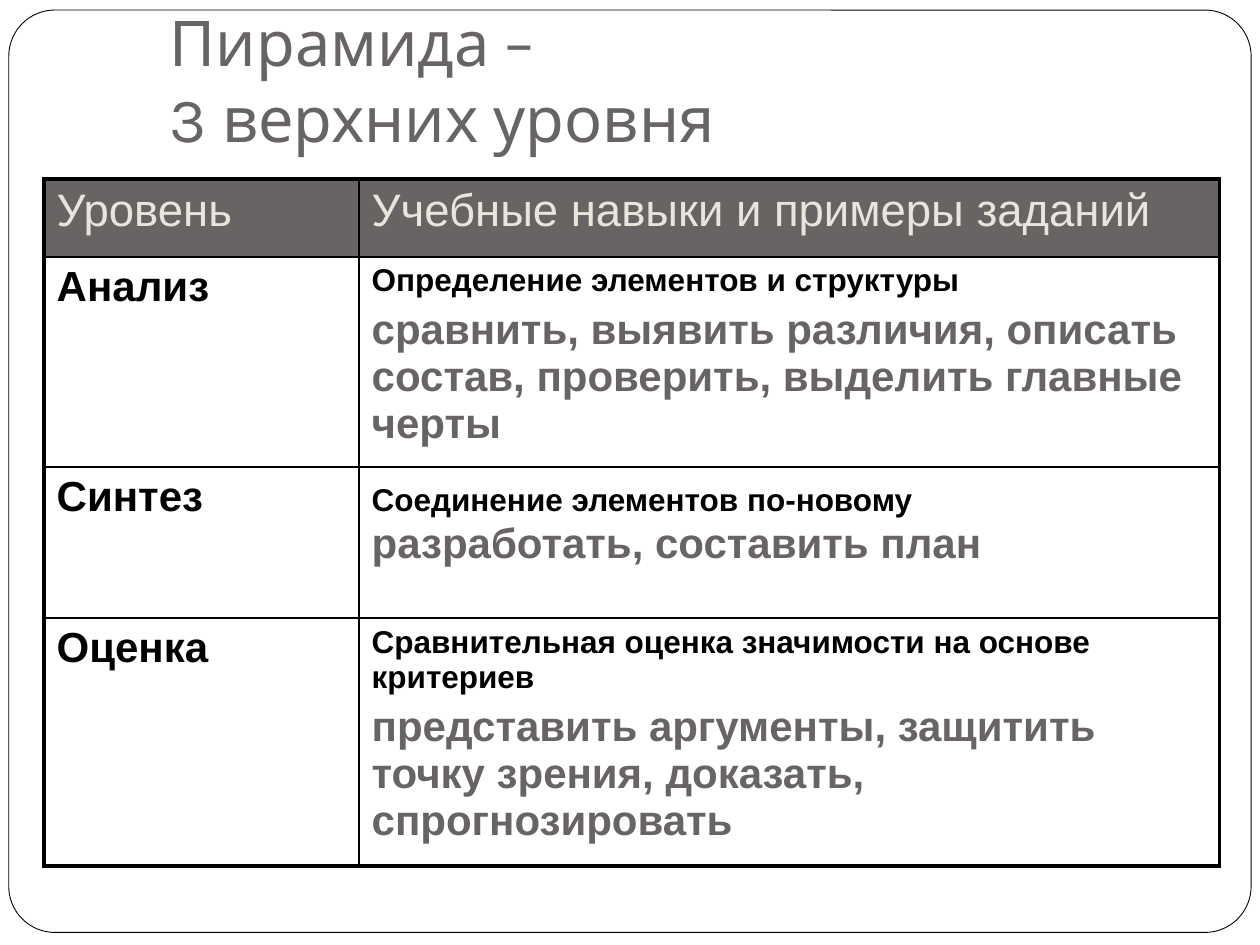
from dataclasses import dataclass

from lxml import etree
from pptx import Presentation
from pptx.dml.color import RGBColor
from pptx.enum.shapes import MSO_SHAPE
from pptx.enum.text import MSO_ANCHOR
from pptx.oxml.ns import qn
from pptx.slide import Slide
from pptx.util import Pt

ROUNDED = MSO_SHAPE.ROUNDED_RECTANGLE
BOTTOM = MSO_ANCHOR.BOTTOM

BLACK = RGBColor(0x00, 0x00, 0x00)
WHITE = RGBColor(0xFF, 0xFF, 0xFF)
GRAY = RGBColor(0x69, 0x64, 0x64)
CREAM = RGBColor(0xE9, 0xE5, 0xDC)

TITLE = {"name": "Karla", "size": Pt(36), "color": GRAY}
HEADER = {"name": "Arial", "size": Pt(26), "bold": False, "color": CREAM}
LEVEL = {"name": "Arial", "size": Pt(24), "bold": True, "color": BLACK}
SKILL = LEVEL | {"size": Pt(18)}
TASK = LEVEL | {"color": GRAY}

COLUMN_WIDTHS = (180, 491.76)
ROW_HEIGHTS = (44.64, 87.12, 86.4, 87.12)
ROWS = [
    ([[("Уровень", HEADER)]],
     [[("Учебные навыки и примеры заданий", HEADER)]]),
    ([[("Анализ", LEVEL)]],
     [[("Определение элементов и структуры", SKILL)],
      [("сравнить, выявить различия, описать состав, проверить, "
        "выделить главные черты", TASK)]]),
    ([[("Синтез", LEVEL)]],
     [[("Соединение элементов по-новому", SKILL), (" \n", LEVEL),
       ("разработать, составить план", TASK)]]),
    ([[("Оценка", LEVEL)]],
     [[("Сравнительная оценка значимости на основе критериев", SKILL)],
      [("представить аргументы, защитить точку зрения, доказать, "
        "спрогнозировать", TASK)]]),
]


@dataclass
class SlideBuilder:
    """Draws styled elements on the current slide, with lengths in points."""

    slide: Slide
    outer_line: float = 2.25
    inner_line: float = 1
    spacing: float = 0.2

    def frame(self, left, top, width, height, adjustment):
        shape = self.slide.shapes.add_shape(
            ROUNDED, Pt(left), Pt(top), Pt(width), Pt(height))
        shape.shadow.inherit = False
        shape.adjustments[0] = adjustment
        shape.fill.solid()
        shape.fill.fore_color.rgb = WHITE
        shape.line.color.rgb = BLACK
        shape.line.width = Pt(0.5)

    def add_runs(self, paragraph, runs):
        for text, style in runs:
            for index, line in enumerate(text.split("\n")):
                if index:
                    paragraph.add_line_break()
                if line:
                    run = paragraph.add_run()
                    run.text = line
                    self.style_font(run.font, style)

    def style_font(self, font, style):
        for name, value in style.items():
            if name == "color":
                font.color.rgb = value
            else:
                setattr(font, name, value)

    def title(self, left, top, width, height, text):
        shape = self.slide.shapes.add_textbox(
            Pt(left), Pt(top), Pt(width), Pt(height))
        layout = {"word_wrap": True, "vertical_anchor": BOTTOM,
                  "margin_bottom": Pt(7.2)}
        for name, value in layout.items():
            setattr(shape.text_frame, name, value)
        self.add_runs(shape.text_frame.paragraphs[0], [(text, TITLE)])

    def table(self, left, top, height, widths, heights, rows):
        shape = self.slide.shapes.add_table(
            len(rows), len(widths), Pt(left), Pt(top),
            Pt(sum(widths)), Pt(height))
        table = shape.table
        table.first_row = table.horz_banding = False
        for column, width in zip(table.columns, widths):
            column.width = Pt(width)
        for row, row_height in zip(table.rows, heights):
            row.height = Pt(row_height)
        shape.height = Pt(height)
        last_row, last_column = len(rows) - 1, len(widths) - 1
        for row_index, row in enumerate(rows):
            for column_index, paragraphs in enumerate(row):
                cell = table.cell(row_index, column_index)
                self.fill_cell(cell, paragraphs)
                self.borders(cell, {
                    "a:lnL": column_index == 0,
                    "a:lnR": column_index == last_column,
                    "a:lnT": row_index == 0,
                    "a:lnB": row_index == last_row})
                if row_index == 0:
                    cell.fill.solid()
                    cell.fill.fore_color.rgb = GRAY
                else:
                    cell.fill.background()

    def fill_cell(self, cell, paragraphs):
        frame = cell.text_frame
        for index, runs in enumerate(paragraphs):
            paragraph = frame.add_paragraph() if index else frame.paragraphs[0]
            size = max(style["size"].pt for _, style in runs)
            paragraph.space_before = Pt(size * self.spacing)
            self.add_runs(paragraph, runs)

    def borders(self, cell, sides):
        properties = cell._tc.get_or_add_tcPr()
        for tag, is_outer in sides.items():
            width = Pt(self.outer_line if is_outer else self.inner_line)
            line = etree.SubElement(properties, qn(tag), w=str(int(width)))
            fill = etree.SubElement(line, qn("a:solidFill"))
            etree.SubElement(fill, qn("a:srgbClr"), val=str(BLACK))


def main():
    presentation = Presentation()
    presentation.slide_width = Pt(720)
    presentation.slide_height = Pt(540)
    builder = SlideBuilder(
        presentation.slides.add_slide(presentation.slide_layouts[6]))
    builder.frame(5.04, 5.76, 709.92, 527.04, 0.05)
    builder.title(90, 5.76, 611.28, 90, "Пирамида – \n3 верхних уровня")
    builder.table(25.2, 102.24, 394.56, COLUMN_WIDTHS, ROW_HEIGHTS, ROWS)
    presentation.save("out.pptx")


if __name__ == "__main__":
    main()
